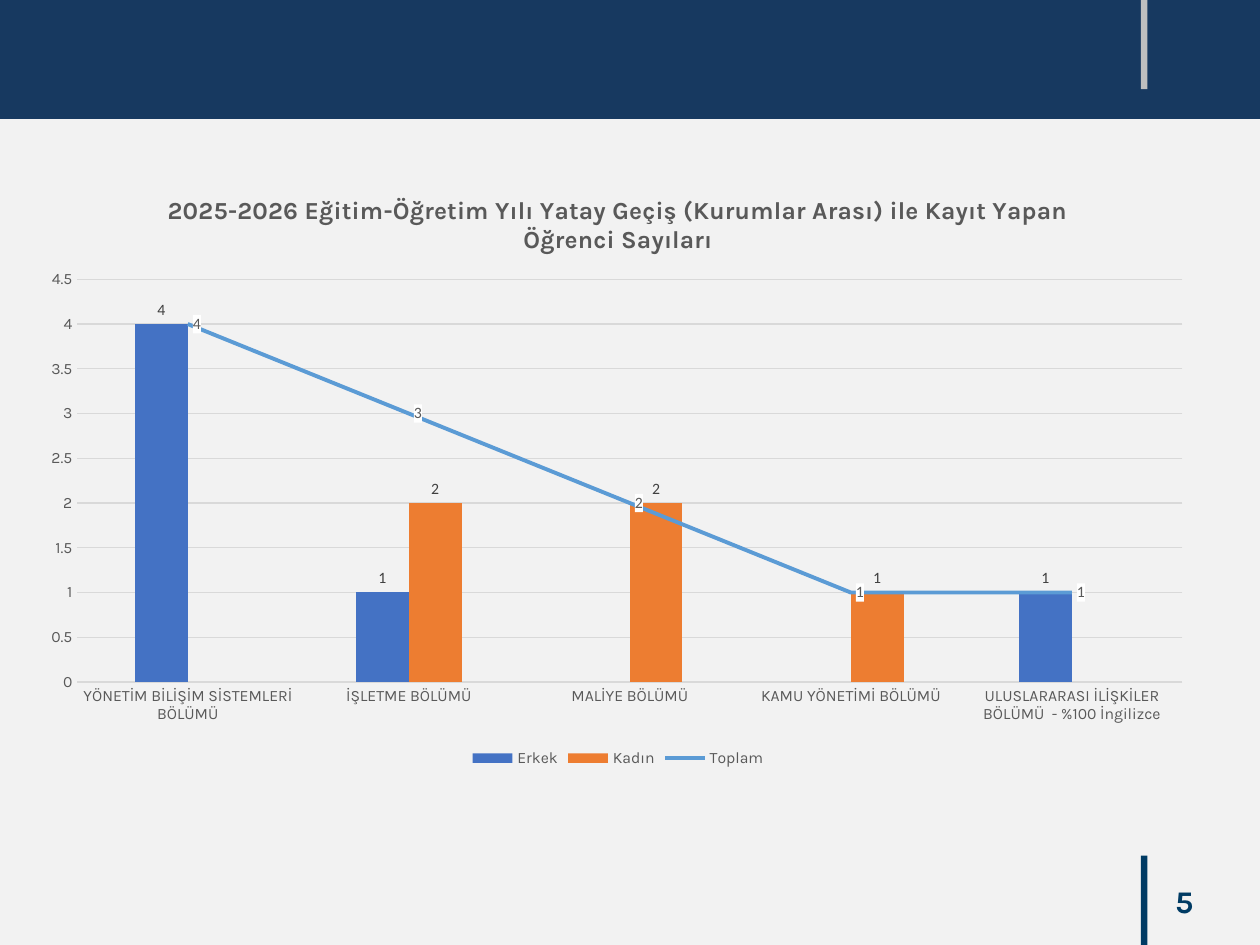
from dataclasses import dataclass
from typing import Any, Optional

import pptx
import pptx.chart.data
import pptx.dml.color
import pptx.enum.chart
import pptx.enum.shapes
import pptx.enum.text
import pptx.oxml
import pptx.oxml.ns
import pptx.util

Cm = pptx.util.Cm
Pt = pptx.util.Pt
XL = pptx.enum.chart
GREY, GRID, NAVY = "595959", "D9D9D9", "003B64"


@dataclass
class Bar:
    left: float
    top: float
    width: float
    height: float
    color: str


@dataclass
class Series:
    name: str
    values: tuple[Optional[int], ...]
    color: str
    label_color: str
    label_position: Any


BARS = [
    Bar(0, 0, 25.4, 2.4, "173960"),
    Bar(23, 17.25, 0.13, 1.8, NAVY),
    Bar(23, 0, 0.13, 1.8, "BFBFBF"),
]
CATEGORIES = [
    "YÖNETİM BİLİŞİM SİSTEMLERİ BÖLÜMÜ",
    "İŞLETME BÖLÜMÜ",
    "MALİYE BÖLÜMÜ",
    "KAMU YÖNETİMİ BÖLÜMÜ",
    "ULUSLARARASI İLİŞKİLER BÖLÜMÜ  - %100 İngilizce",
]
ABOVE, RIGHT = XL.XL_LABEL_POSITION.OUTSIDE_END, XL.XL_LABEL_POSITION.RIGHT
SERIES = [
    Series("Erkek", (4, 1, None, None, 1), "4472C4", "404040", ABOVE),
    Series("Kadın", (None, 2, 2, 1, None), "ED7D31", "404040", ABOVE),
    Series("Toplam", (4, 3, 2, 1, 1), "5B9BD5", GREY, RIGHT),
]
TITLE = ("2025-2026 Eğitim-Öğretim Yılı Yatay Geçiş (Kurumlar Arası) "
         "ile Kayıt Yapan Öğrenci Sayıları")


def rgb(color: str) -> pptx.dml.color.RGBColor:
    return pptx.dml.color.RGBColor.from_string(color)


def apply(target: Any, values: dict[str, Any]) -> None:
    for name, value in values.items():
        setattr(target, name, value)


def set_font(font: Any, size: float, color: str, name: str = "Karla", bold: bool = False) -> None:
    apply(font, {"size": Pt(size), "name": name, "bold": bold})
    font.color.rgb = rgb(color)


def set_line(line: Any, color: str, width: float) -> None:
    line.color.rgb = rgb(color)
    line.width = Pt(width)


def xml(body: str) -> Any:
    tag, rest = body.split(">", 1)
    return pptx.oxml.parse_xml(f"{tag} {pptx.oxml.ns.nsdecls('c', 'a')}>{rest}")


def add_bar(s: Any, bar: Bar) -> None:
    box = map(Cm, (bar.left, bar.top, bar.width, bar.height))
    sp = s.shapes.add_shape(pptx.enum.shapes.MSO_SHAPE.RECTANGLE, *box)
    sp.shadow.inherit = False
    sp.fill.solid()
    sp.fill.fore_color.rgb = rgb(bar.color)
    sp.line.fill.background()


def add_page_number(s: Any, number: str) -> None:
    tf = s.shapes.add_textbox(Cm(18.6), Cm(17.65), Cm(5.71), Cm(1.02)).text_frame
    apply(tf, {"word_wrap": True, "vertical_anchor": pptx.enum.text.MSO_ANCHOR.MIDDLE})
    p = tf.paragraphs[0]
    p.alignment = pptx.enum.text.PP_ALIGN.RIGHT
    r = p.add_run()
    r.text = number
    set_font(r.font, 18, NAVY, bold=True)


def move_last_series_to_line(chart: Any) -> None:
    bar_chart = chart.element.xpath(".//c:barChart")[0]
    ser = bar_chart.xpath("c:ser")[-1]
    for node in ser.xpath("c:invertIfNegative"):
        ser.remove(node)
    axes = "".join(f'<c:axId val="{v}"/>' for v in bar_chart.xpath("c:axId/@val"))
    line_chart = xml('<c:lineChart><c:grouping val="standard"/><c:varyColors val="0"/>'
                     f'<c:marker val="1"/>{axes}</c:lineChart>')
    line_chart.insert(2, ser)
    bar_chart.addnext(line_chart)


def set_plot_layout(chart: Any, x: float, y: float, w: float, h: float) -> None:
    area = chart.element.xpath(".//c:plotArea")[0]
    for node in area.xpath("c:layout"):
        area.remove(node)
    sides = "".join(f'<c:{k} val="{v}"/>' for k, v in zip("xywh", (x, y, w, h)))
    area.insert(0, xml('<c:layout><c:manualLayout><c:layoutTarget val="inner"/>'
                       '<c:xMode val="edge"/><c:yMode val="edge"/>'
                       f'{sides}</c:manualLayout></c:layout>'))


def format_axes(chart: Any) -> None:
    for axis in (chart.category_axis, chart.value_axis):
        apply(axis, {"major_tick_mark": XL.XL_TICK_MARK.NONE,
                     "minor_tick_mark": XL.XL_TICK_MARK.NONE})
        set_font(axis.tick_labels.font, 9, GREY)
    set_line(chart.category_axis.format.line, GRID, 0.75)
    axis = chart.value_axis
    apply(axis, {"minimum_scale": 0, "maximum_scale": 4.5, "major_unit": 0.5})
    axis.format.line.fill.background()
    set_line(axis.major_gridlines.format.line, GRID, 0.75)


def format_series(chart: Any) -> None:
    bars, line = chart.plots
    apply(bars, {"gap_width": 219, "overlap": 0, "vary_by_categories": False})
    for ser, style in zip([*bars.series, *line.series], SERIES):
        labels = ser.data_labels
        apply(labels, {"show_value": True, "position": style.label_position})
        set_font(labels.font, 9, style.label_color, "Calibri")
    for ser, style in zip(bars.series, SERIES):
        ser.format.fill.solid()
        ser.format.fill.fore_color.rgb = rgb(style.color)
    total = line.series[0]
    total.smooth = False
    total.marker.style = XL.XL_MARKER_STYLE.NONE
    set_line(total.format.line, SERIES[-1].color, 2.25)
    label_text = chart.element.xpath(".//c:lineChart/c:ser/c:dLbls/c:txPr")[0]
    label_text.addprevious(xml('<c:spPr><a:solidFill><a:srgbClr val="FFFFFF"/>'
                               '</a:solidFill></c:spPr>'))


def add_student_chart(s: Any) -> None:
    data = pptx.chart.data.CategoryChartData()
    data.categories = CATEGORIES
    for series in SERIES:
        data.add_series(series.name, series.values)
    chart = s.shapes.add_chart(XL.XL_CHART_TYPE.COLUMN_CLUSTERED, Cm(0.61), Cm(3.45),
                               Cm(23.7), Cm(12.12), data).chart
    set_font(chart.font, 10, "000000", "Calibri")
    apply(chart, {"has_title": True, "has_legend": True})
    p = chart.chart_title.text_frame.paragraphs[0]
    r = p.add_run()
    r.text = TITLE
    set_font(r.font, 14, GREY, bold=True)
    apply(chart.legend, {"position": XL.XL_LEGEND_POSITION.BOTTOM, "include_in_layout": False})
    set_font(chart.legend.font, 9, GREY)
    format_axes(chart)
    move_last_series_to_line(chart)
    format_series(chart)
    set_plot_layout(chart, 0.04, 0.18, 0.94, 0.67)


def main() -> None:
    prs = pptx.Presentation()
    apply(prs, {"slide_width": Cm(25.4), "slide_height": Cm(19.05)})
    s = prs.slides.add_slide(prs.slide_layouts[6])
    s.background.fill.solid()
    s.background.fill.fore_color.rgb = rgb("F2F2F2")
    for bar in BARS:
        add_bar(s, bar)
    add_page_number(s, "5")
    add_student_chart(s)
    prs.save("out.pptx")


if __name__ == "__main__":
    main()
